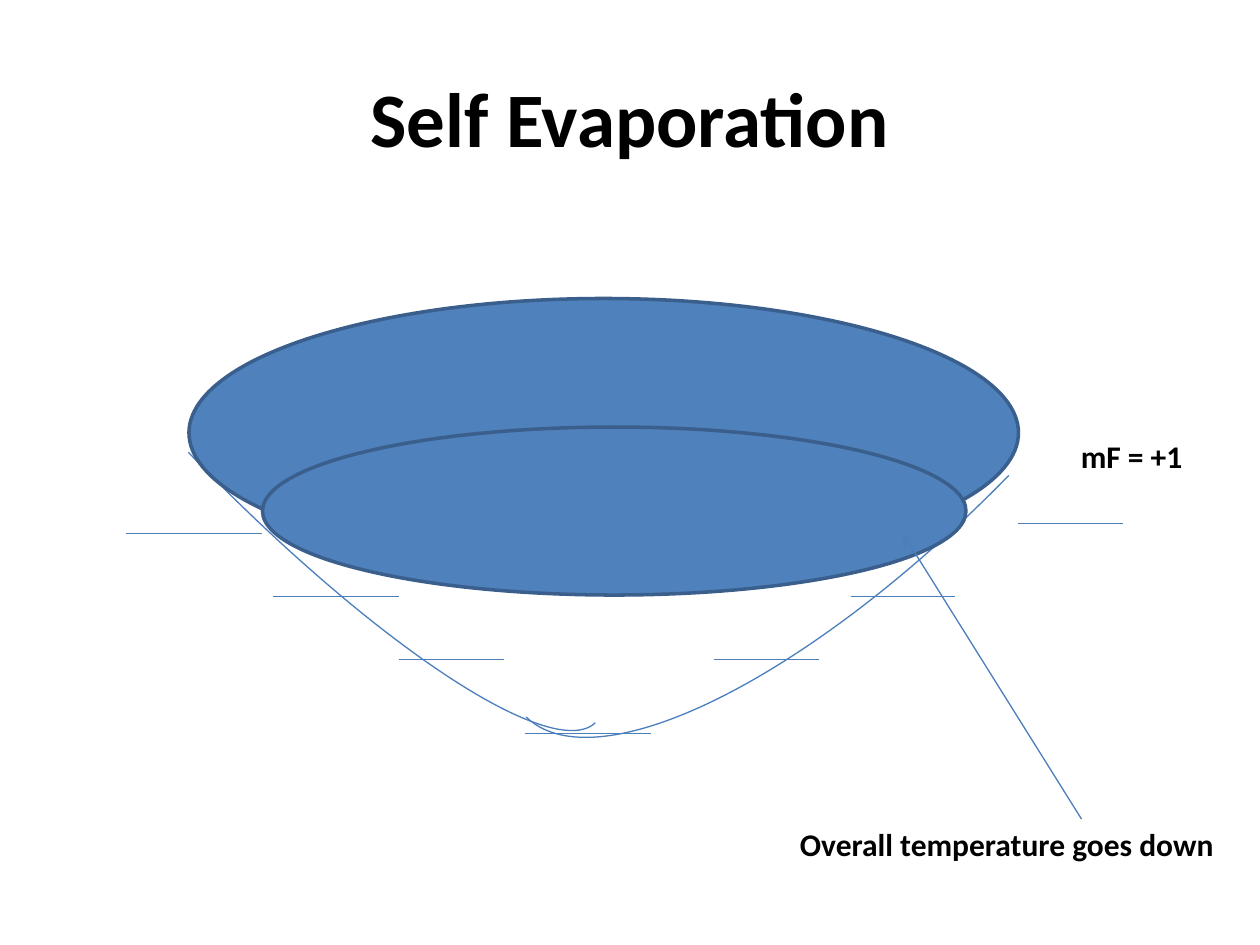
from dataclasses import dataclass

from lxml.etree import SubElement
from pptx import Presentation
from pptx.dml.color import RGBColor
from pptx.enum.shapes import MSO_CONNECTOR as Connector, MSO_SHAPE as Shape
from pptx.enum.text import MSO_ANCHOR as Anchor, MSO_AUTO_SIZE as AutoSize, PP_ALIGN as Align
from pptx.oxml.ns import qn
from pptx.util import Pt


@dataclass(frozen=True)
class Theme:
    font: str = "Calibri"
    text: RGBColor = RGBColor(0x00, 0x00, 0x00)
    background: RGBColor = RGBColor(0xFF, 0xFF, 0xFF)
    line: RGBColor = RGBColor(0x4B, 0x7E, 0xBC)
    cloud: RGBColor = RGBColor(0x4F, 0x81, 0xBD)
    cloud_edge: RGBColor = RGBColor(0x3A, 0x5F, 0x8C)
    title_size: int = 44
    label_size: int = 18
    line_width: float = 0.75
    edge_width: float = 2


theme = Theme()
deck = Presentation()
deck.slide_width, deck.slide_height = Pt(720), Pt(540)
page = deck.slides.add_slide(deck.slide_layouts[5])
page.background.fill.solid()
page.background.fill.fore_color.rgb = theme.background


def write(para, text, size):
    span = para.add_run()
    span.text = text
    span.font.name = theme.font
    span.font.size = Pt(size)
    span.font.bold = True
    span.font.color.rgb = theme.text


def add_line(x1, y1, x2, y2):
    line = page.shapes.add_connector(Connector.STRAIGHT, Pt(x1), Pt(y1), Pt(x2), Pt(y2))
    line.line.color.rgb = theme.line
    line.line.width = Pt(theme.line_width)
    SubElement(line._element.spPr, qn("a:effectLst"))
    return line


# Title
title = page.shapes.title
title.left, title.top, title.width, title.height = Pt(36), Pt(21.6), Pt(648), Pt(90)
title.text_frame.vertical_anchor = Anchor.MIDDLE
title.text_frame.paragraphs[0].alignment = Align.CENTER
write(title.text_frame.paragraphs[0], "Self Evaporation", theme.title_size)

# Energy levels of the trap: left, right, height
levels = [
    (72, 150, 305), (156, 228, 341), (228, 288, 377), (300, 372, 419),
    (408, 468, 377), (486, 546, 341), (582, 642, 299),
]
for left, right, height in levels:
    add_line(left, height, right, height)

# Trap walls: left, top, width, height, rotation, mirrored
walls = [
    (212.4, 99.4, 582.5, 203, 134.2, False),
    (-121, 155.5, 545, 121.7, 226.2, True),
]
for left, top, width, height, rotation, mirrored in walls:
    wall = page.shapes.add_shape(Shape.ARC, Pt(left), Pt(top), Pt(width), Pt(height))
    wall.shadow.inherit = False
    wall.rotation = rotation
    wall.fill.background()
    wall.line.color.rgb = theme.line
    wall.line.width = Pt(theme.line_width)
    if mirrored:
        wall._element.spPr.xfrm.set("flipH", "1")

# Atom clouds before and after evaporation
for left, top, width, height in [(108, 170.6, 474, 153.4), (150, 244, 402, 96)]:
    cloud = page.shapes.add_shape(Shape.OVAL, Pt(left), Pt(top), Pt(width), Pt(height))
    cloud.shadow.inherit = False
    cloud.fill.solid()
    cloud.fill.fore_color.rgb = theme.cloud
    cloud.line.color.rgb = theme.cloud_edge
    cloud.line.width = Pt(theme.edge_width)

# Pointer from the remark to the cooled cloud
pointer = add_line(618, 468, 516, 305)
SubElement(pointer.line._get_or_add_ln(), qn("a:tailEnd"), type="arrow")

# Labels
labels = [
    ("mF = +1", 610.5, 246.2, 73.5),
    ("Overall temperature goes down", 450, 468, 252.7),
]
for text, left, top, width in labels:
    box = page.shapes.add_textbox(Pt(left), Pt(top), Pt(width), Pt(29))
    box.text_frame.word_wrap = False
    box.text_frame.auto_size = AutoSize.SHAPE_TO_FIT_TEXT
    write(box.text_frame.paragraphs[0], text, theme.label_size)

deck.save("out.pptx")
